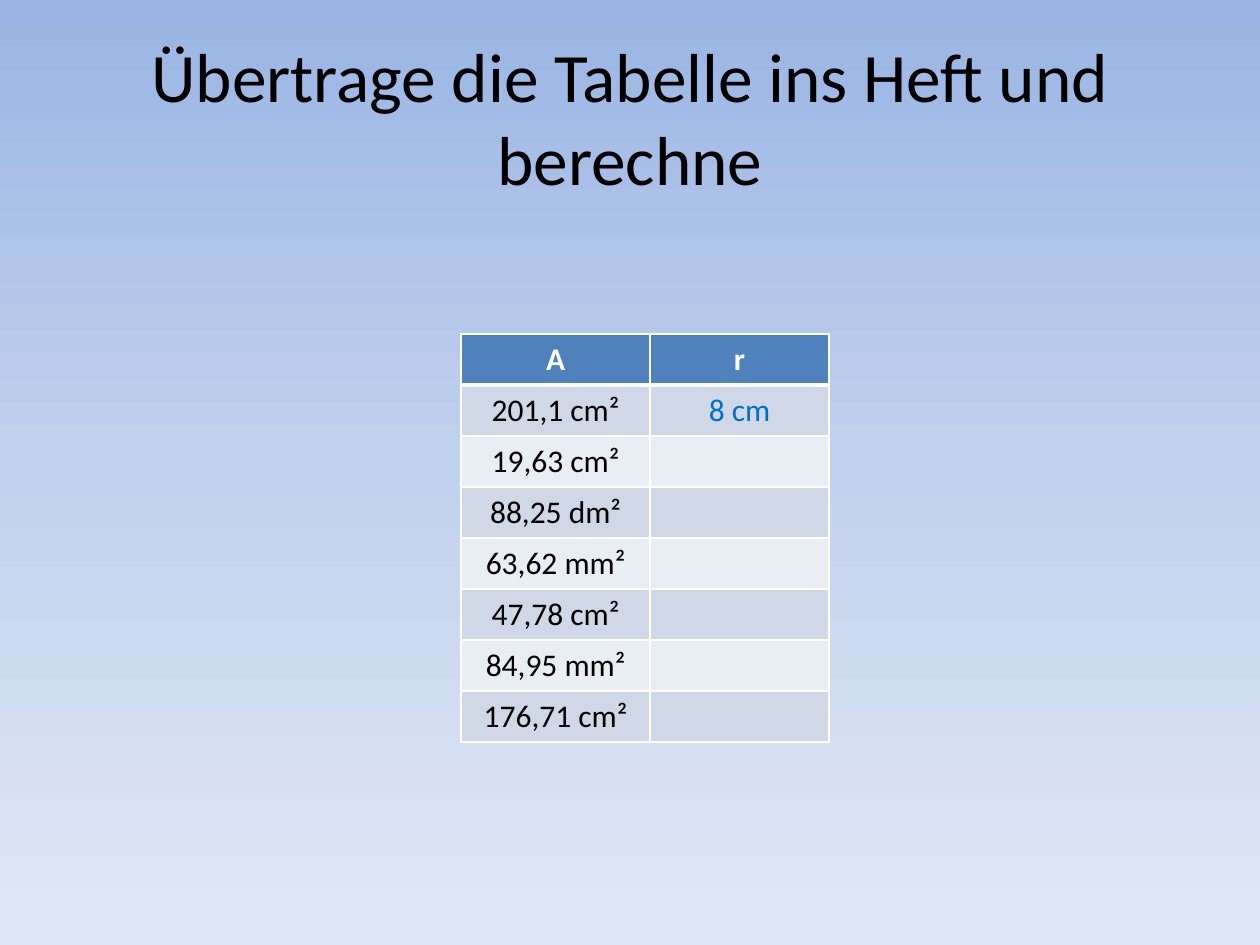
from copy import deepcopy
from typing import NamedTuple

from lxml import etree
from pptx import Presentation
from pptx.dml.color import RGBColor
from pptx.enum import text
from pptx.oxml import ns
from pptx.util import Inches, Pt

BLACK = RGBColor(0x00, 0x00, 0x00)
WHITE = RGBColor(0xFF, 0xFF, 0xFF)
ANSWER_BLUE = RGBColor(0x00, 0x70, 0xC0)
HEADER_BLUE = RGBColor(0x4F, 0x81, 0xBD)
BANDS = (RGBColor(0xD0, 0xD8, 0xE8), RGBColor(0xE9, 0xED, 0xF4))
GRADIENT = (
    (0.0, RGBColor(0x9A, 0xB5, 0xE4)),
    (0.5, RGBColor(0xC2, 0xD1, 0xED)),
    (1.0, RGBColor(0xE1, 0xE8, 0xF5)),
)
FONT = "Calibri"


class Exercise(NamedTuple):
    area: str
    radius: str = ""


EXERCISES = (
    Exercise("201,1 cm²", "8 cm"),
    Exercise("19,63 cm²"),
    Exercise("88,25 dm²"),
    Exercise("63,62 mm²"),
    Exercise("47,78 cm²"),
    Exercise("84,95 mm²"),
    Exercise("176,71 cm²"),
)
COLUMN_WIDTHS = (Inches(1.5), Inches(1.42))
ROW_HEIGHT = Inches(0.405)


def paint_background(slide) -> None:
    fill = slide.background.fill
    fill.gradient()
    fill.gradient_angle = 270
    stop_list = slide.element.find(".//" + ns.qn("a:gsLst"))
    stop_list.append(deepcopy(stop_list[-1]))
    for stop, (position, color) in zip(fill.gradient_stops, GRADIENT):
        stop.position = position
        stop.color.rgb = color


def format_paragraph(paragraph, size: float, color: RGBColor, bold: bool = False) -> None:
    paragraph.alignment = text.PP_ALIGN.CENTER
    for run in paragraph.runs:
        run.font.name = FONT
        run.font.size = Pt(size)
        run.font.bold = bold
        run.font.color.rgb = color


def add_title(slide, title: str) -> None:
    box = slide.shapes.add_textbox(Inches(0.5), Inches(0.3), Inches(9), Inches(1.25))
    frame = box.text_frame
    frame.word_wrap = True
    frame.vertical_anchor = text.MSO_ANCHOR.MIDDLE
    frame.text = title
    format_paragraph(frame.paragraphs[0], 39.6, BLACK)


def add_borders(cell, top: float, bottom: float) -> None:
    """Draw white borders; the sides are always 1 point wide."""
    properties = cell._tc.get_or_add_tcPr()
    for side, width in (("L", 1), ("R", 1), ("T", top), ("B", bottom)):
        line = etree.SubElement(properties, ns.qn(f"a:ln{side}"), w=str(Pt(width)))
        solid = etree.SubElement(line, ns.qn("a:solidFill"))
        etree.SubElement(solid, ns.qn("a:srgbClr"), val=str(WHITE))


def add_exercise_table(slide) -> None:
    rows = (Exercise("A", "r"), *EXERCISES)
    table = slide.shapes.add_table(
        len(rows), len(COLUMN_WIDTHS), Inches(3.66), Inches(2.65),
        sum(COLUMN_WIDTHS), ROW_HEIGHT * len(rows),
    ).table
    for column, width in zip(table.columns, COLUMN_WIDTHS):
        column.width = width

    for row_index, row in enumerate(rows):
        table.rows[row_index].height = ROW_HEIGHT
        is_header = row_index == 0
        fill_color = HEADER_BLUE if is_header else BANDS[(row_index - 1) % 2]
        text_colors = (WHITE, WHITE) if is_header else (BLACK, ANSWER_BLUE)
        for column_index, value in enumerate(row):
            cell = table.cell(row_index, column_index)
            add_borders(cell, top=3 if row_index == 1 else 1, bottom=3 if is_header else 1)
            cell.fill.solid()
            cell.fill.fore_color.rgb = fill_color
            cell.text_frame.text = value
            format_paragraph(
                cell.text_frame.paragraphs[0], 18, text_colors[column_index], is_header
            )


def main() -> None:
    presentation = Presentation()
    presentation.slide_width = Inches(10)
    presentation.slide_height = Inches(7.5)
    slide = presentation.slides.add_slide(presentation.slide_layouts[6])
    paint_background(slide)
    add_title(slide, "Übertrage die Tabelle ins Heft und berechne")
    add_exercise_table(slide)
    presentation.save("out.pptx")


if __name__ == "__main__":
    main()
